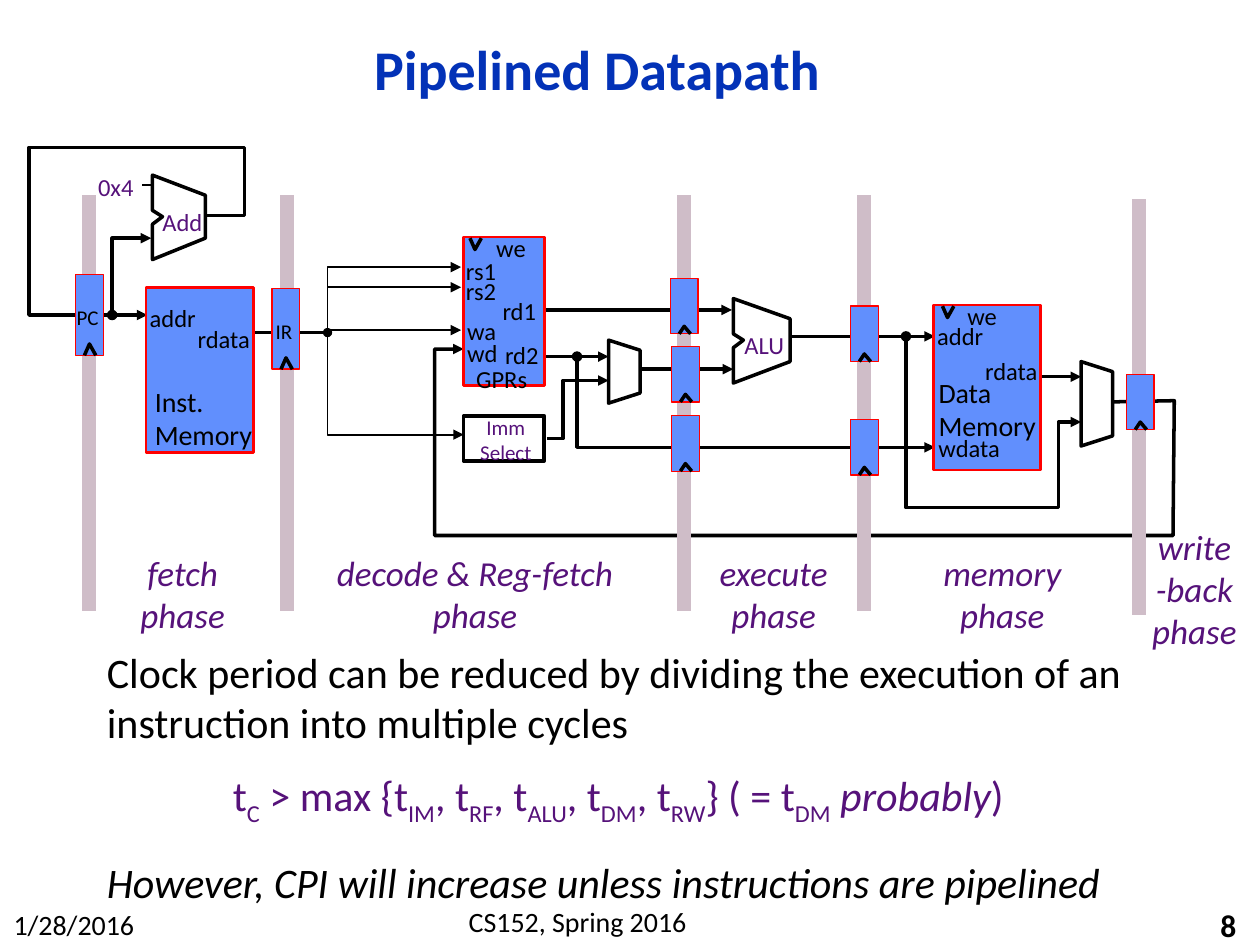
from lxml import etree
from pptx import Presentation
from pptx.dml.color import RGBColor
from pptx.enum.shapes import MSO_CONNECTOR, MSO_SHAPE
from pptx.enum.text import MSO_ANCHOR, MSO_AUTO_SIZE, PP_ALIGN
from pptx.oxml.ns import qn
from pptx.util import Inches, Pt

LEFT, MID, RIGHT = PP_ALIGN.LEFT, PP_ALIGN.CENTER, PP_ALIGN.RIGHT
CENTER = MSO_ANCHOR.MIDDLE
GROW = MSO_AUTO_SIZE.SHAPE_TO_FIT_TEXT
RECT, OVAL = MSO_SHAPE.RECTANGLE, MSO_SHAPE.OVAL
STRAIGHT = MSO_CONNECTOR.STRAIGHT
BLACK = RGBColor(0x00, 0x00, 0x00)
WHITE = RGBColor(0xFF, 0xFF, 0xFF)
BLUE = RGBColor(0x61, 0x8F, 0xFD)
NAVY = RGBColor(0x03, 0x32, 0xB7)
RED = RGBColor(0xFF, 0x00, 0x00)
PLUM = RGBColor(0x56, 0x12, 0x7A)
MAUVE = RGBColor(0xCF, 0xBD, 0xC8)

ARROW = {"tailEnd": "triangle"}
TAP = {"headEnd": "oval", "tailEnd": "triangle"}
WIRES = [
    ([(1.62, 1.71), (1.94, 1.71), (1.94, 1.17), (0.23, 1.17), (0.23, 2.5), (1.17, 2.5)], 2, ARROW),
    ([(0.89, 2.5), (0.89, 1.89), (1.2, 1.89)], 2, TAP),
    ([(1.13, 1.47), (1.2, 1.47)], 1, {}),
    ([(2.01, 2.64), (2.59, 2.64)], 2, {}),
    ([(2.6, 2.45), (2.6, 2.12), (3.66, 2.12)], 1, ARROW),
    ([(2.6, 2.28), (3.66, 2.28)], 1, ARROW),
    ([(2.6, 2.62), (3.66, 2.62)], 1, ARROW),
    ([(2.6, 2.42), (2.6, 3.45), (3.68, 3.45)], 1, ARROW),
    ([(4.33, 2.46), (5.81, 2.46)], 2, ARROW),
    ([(4.31, 2.83), (4.83, 2.83)], 2, ARROW),
    ([(4.34, 3.48), (4.47, 3.48), (4.47, 3.02), (4.83, 3.02)], 2, ARROW),
    ([(4.58, 2.83), (4.58, 3.55), (7.42, 3.55)], 2, TAP),
    ([(5.08, 2.93), (5.82, 2.93)], 2, ARROW),
    ([(6.25, 2.67), (7.42, 2.67)], 2, ARROW),
    ([(7.19, 2.67), (7.19, 4.03), (8.4, 4.03), (8.4, 3.35), (8.58, 3.35)], 2, TAP),
    ([(8.27, 2.99), (8.58, 2.99)], 2, ARROW),
    ([(8.82, 3.19), (9.32, 3.18), (9.31, 4.25), (3.45, 4.25), (3.45, 2.77), (3.68, 2.77)], 2, ARROW),
]
BLOCKS = [
    (RECT, 1.16, 2.28, 0.85, 1.31, BLUE, RED, 1.5),
    (RECT, 3.68, 1.88, 0.64, 1.18, BLUE, RED, 1.5),
    (RECT, 7.41, 2.42, 0.85, 1.31, BLUE, RED, 1.5),
    (RECT, 3.68, 3.3, 0.64, 0.36, WHITE, BLACK, 2),
    (OVAL, 2.57, 2.61, 0.06, 0.06, BLACK, BLACK, 1),
]
ADDERS = [(1.21, 1.39, 0.42), (5.82, 2.37, 0.45)]
MUXES = [(4.83, 2.7, 0.5), (8.58, 2.87, 0.67)]
CLOCKS = [(3.73, 1.89), (7.48, 2.43)]
BARS = [(0.71, 1.55), (2.28, 1.55), (5.43, 1.55), (6.86, 1.55), (9.04, 1.58)]
TALL, SHORT = (0.64, 0.09), (0.44, 0.06)
REGS = [
    (0.6, 2.18, TALL), (2.16, 2.29, TALL),
    (5.32, 2.21, SHORT), (5.33, 2.75, SHORT), (5.33, 3.3, SHORT),
    (6.75, 2.43, SHORT), (6.75, 3.33, SHORT), (8.94, 2.97, SHORT),
]
PORTS = [
    ("addr", 1.09, 2.36, 0.57), ("rdata", 1.47, 2.52, 0.63),
    ("we", 3.84, 1.8, 0.44), ("rs1", 3.6, 1.98, 0.44), ("rs2", 3.6, 2.14, 0.44),
    ("rd1", 3.89, 2.3, 0.53), ("wa", 3.61, 2.46, 0.43), ("wd", 3.61, 2.63, 0.44),
    ("rd2", 3.91, 2.65, 0.51), ("GPRs", 3.68, 2.84, 0.61),
    ("we", 7.58, 2.34, 0.44), ("addr", 7.34, 2.5, 0.57),
    ("rdata", 7.72, 2.78, 0.63), ("wdata", 7.35, 3.39, 0.7),
]
UNITS = [("0x4", 0.68, 1.32, 0.48), ("Add", 1.19, 1.59, 0.52), ("ALU", 5.81, 2.57, 0.52)]
STORES = [("Inst.\nMemory", 1.13, 3, 0.98), ("Data\nMemory", 7.35, 2.93, 0.98)]
PHASES = [
    ("fetch\nphase", 0.9, 4.33, 1.1), ("decode & Reg-fetch\nphase", 2.27, 4.33, 3),
    ("execute\nphase", 5.44, 4.33, 1.4), ("memory\nphase", 7.19, 4.33, 1.53),
    ("write\n-back\nphase", 9.01, 4.12, 0.94),
]
SETS = [
    (PORTS, 0.33, {"size": Pt(14)}, LEFT),
    (UNITS, 0.33, {"size": Pt(14), "color": PLUM}, LEFT),
    (STORES, 0.64, {"size": Pt(16)}, LEFT),
    ([("Imm\nSelect", 3.71, 3.24, 0.61)], 0.5, {"size": Pt(12), "color": PLUM}, MID),
    (PHASES, 0.76, {"size": Pt(20), "color": PLUM, "italic": True}, MID),
]
NAMES = [("PC", 0.51, 2.37, 0.38), ("IR", 2.09, 2.48, 0.34)]
INTRO = "Clock period can be reduced by dividing the execution of an instruction into multiple cycles"
TERMS = [
    ("t", "C"), (" > max {t", "IM"), (", t", "RF"), (", t", "ALU"),
    (", t", "DM"), (", t", "RW"), ("} ( = t", "DM"),
]
CLOSE = "However, CPI will increase unless instructions are pipelined"

deck = Presentation()
deck.slide_width, deck.slide_height = Inches(10), Inches(7.5)
slide = deck.slides.add_slide(deck.slide_layouts[6])
shapes = slide.shapes


def ink(shape, color, width, ends=None):
    shape.line.color.rgb = color
    shape.line.width = Pt(width)
    ln = shape.line._get_or_add_ln()
    etree.SubElement(ln, qn("a:round"))
    for tag, kind in (ends or {}).items():
        etree.SubElement(ln, qn("a:" + tag)).set("type", kind)


def line(pts, color, width, ends):
    ext = [Inches(v) for pt in pts for v in pt]
    rod = shapes.add_connector(STRAIGHT, *ext)
    ink(rod, color, width, ends)
    etree.SubElement(rod._element.spPr, qn("a:effectLst"))


def poly(pts, fill=None, ends=None):
    spots = [(Inches(x), Inches(y)) for x, y in pts]
    pen = shapes.build_freeform(*spots[0])
    pen.add_line_segments(spots[1:], close=fill is not None)
    shape = pen.convert_to_shape()
    shape.shadow.inherit = False
    if fill is None:
        shape.fill.background()
    else:
        shape.fill.solid()
        shape.fill.fore_color.rgb = fill
    ink(shape, BLACK, 2, ends)
    return shape


def block(kind, x, y, w, h, fill, edge, width):
    shape = shapes.add_shape(kind, Inches(x), Inches(y), Inches(w), Inches(h))
    shape.shadow.inherit = False
    shape.fill.solid()
    shape.fill.fore_color.rgb = fill
    ink(shape, edge, width)


def tick(x, y, rise):
    poly([(x, y), (x + 0.04, y + rise), (x + 0.09, y)])


def style(font, form):
    for key, val in {"name": "Calibri", "color": BLACK, **form}.items():
        if key == "color":
            font.color.rgb = val
        else:
            setattr(font, key, val)


def put(para, text, form):
    run = para.add_run()
    run.text = text
    style(run.font, form)
    return run


def label(text, x, y, w, h, form, align=LEFT, wrap=False, **frame):
    box = shapes.add_textbox(Inches(x), Inches(y), Inches(w), Inches(h)).text_frame
    for key, val in {"word_wrap": wrap, "auto_size": GROW, **frame}.items():
        setattr(box, key, val)
    for i, part in enumerate(text.split("\n")):
        para = box.add_paragraph() if i else box.paragraphs[0]
        para.alignment = align
        put(para, part, form)
    return box


label("1/28/2016", 0.01, 7.15, 1.17, 0.37, {"size": Pt(16)})
label("CS152, Spring 2016", 2.92, 7.13, 3.33, 0.37, {"size": Pt(16)}, MID, True)
title = label("Pipelined Datapath", 0.75, 0.17, 7.98, 0.81,
              {"size": Pt(32), "bold": True, "color": NAVY}, MID, True,
              auto_size=MSO_AUTO_SIZE.NONE, vertical_anchor=CENTER)
title.paragraphs[0].line_spacing = 0.9
label("8", 7.83, 7.18, 2.08, 0.32, {"size": Pt(18), "bold": True}, RIGHT, True,
      auto_size=MSO_AUTO_SIZE.NONE, vertical_anchor=CENTER)

body = label(INTRO, 0.75, 5.08, 8.8, 2.05, {"size": Pt(24)}, wrap=True)
rule = body.add_paragraph()
rule.space_before = Pt(12.8)
rule._p.get_or_add_pPr().set("marL", str(Inches(1)))
math = {"size": Pt(24), "color": PLUM}
for term, sub in TERMS:
    put(rule, term, math)
    put(rule, sub, math).font._element.set("baseline", "-25000")
put(rule, " probably", {**math, "italic": True})
put(rule, ")", math)
last = body.add_paragraph()
last.space_before = Pt(17)
put(last, CLOSE, {"size": Pt(24), "italic": True})

for pts, width, ends in WIRES:
    if len(pts) == 2:
        line(pts, BLACK, width, ends)
    else:
        poly(pts, ends=ends).line.width = Pt(width)
for spec in BLOCKS:
    block(*spec)
for x, y, w in ADDERS:
    poly([(x, y), (x, y + 0.28), (x + 0.08, y + 0.33), (x, y + 0.39),
          (x, y + 0.67), (x + w, y + 0.5), (x + w, y + 0.16)], WHITE)
for x, y, h in MUXES:
    poly([(x, y), (x + 0.25, y + 0.08), (x + 0.25, y + h - 0.08), (x, y + h)], WHITE)
for x, y in CLOCKS:
    tick(x, y, 0.09)
for items, h, form, align in SETS:
    for text, x, y, w in items:
        label(text, x, y, w, h, form, align)
for x, y in BARS:
    line([(x, y), (x, y + 3.3)], MAUVE, 8, {})
for x, y, (h, rise) in REGS:
    block(RECT, x, y, 0.22, h, BLUE, RED, 0.75)
    tick(x + 0.07, y + h, -rise)
for text, x, y, w in NAMES:
    label(text, x, y, w, 0.3, {"size": Pt(12)})

deck.save("out.pptx")
